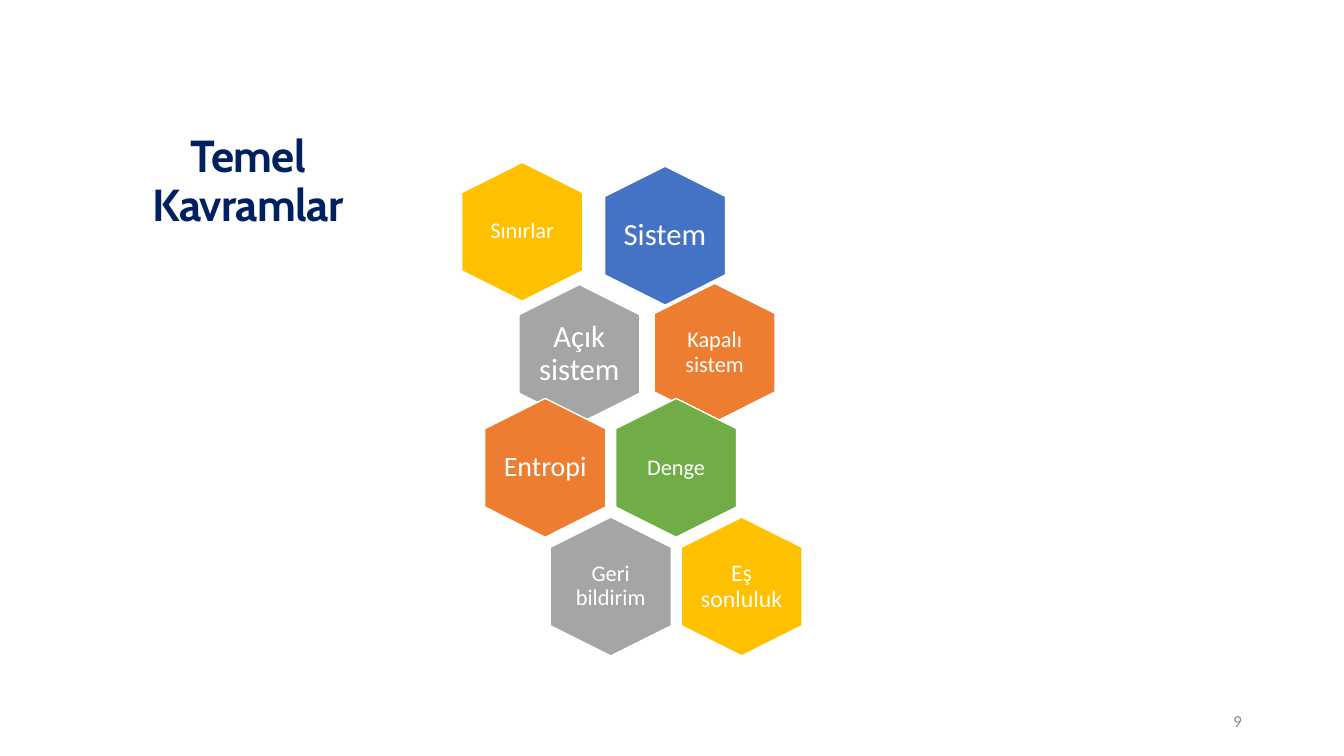
import dataclasses

import pptx
import pptx.dml.color
import pptx.enum.shapes
import pptx.enum.text
import pptx.util

Cm = pptx.util.Cm
Pt = pptx.util.Pt
Align = pptx.enum.text.PP_ALIGN


@dataclasses.dataclass(frozen=True)
class Theme:
    white: str = "FFFFFF"
    navy: str = "002060"
    mute: str = "8C8C8C"
    blue: str = "4472C4"
    orange: str = "ED7D31"
    gray: str = "A5A5A5"
    gold: str = "FFC000"
    green: str = "70AD47"
    head: str = "Cabin"
    body: str = "Calibri"
    title: int = 32
    large: int = 22
    mid: int = 20
    plus: int = 17
    small: int = 16
    foot: int = 12


THEME = Theme()

TITLE = "Temel Kavramlar"
NUMBER = "9"

# Label, centre x and y in cm, fill, type size; back to front
CELLS = [
    ("Kapalı sistem", 18.01, 8.89, THEME.orange, THEME.small),
    ("Açık sistem", 14.6, 8.92, THEME.gray, THEME.large),
    ("Sınırlar", 13.16, 5.84, THEME.gold, THEME.small),
    ("Sistem", 16.76, 5.94, THEME.blue, THEME.large),
    ("Denge", 17.04, 11.79, THEME.green, THEME.small),
    ("Entropi", 13.74, 11.79, THEME.orange, THEME.mid),
    ("Geri bildirim", 15.39, 14.78, THEME.gray, THEME.small),
    ("Eş sonluluk", 18.69, 14.78, THEME.gold, THEME.plus),
]
HEX = (3.5, 3.05)
LABEL = (2.11, 2.41)


def rgb(code):
    return pptx.dml.color.RGBColor.from_string(code)


def center(x, y, size):
    """Return left, top, width and height of a box centred on x, y."""
    wide, high = size
    return Cm(x - wide / 2), Cm(y - high / 2), Cm(wide), Cm(high)


def write(shape, text, size, color, align, face=THEME.body, bold=False,
          inset=None, space=None):
    frame = shape.text_frame
    frame.word_wrap = True
    frame.auto_size = pptx.enum.text.MSO_AUTO_SIZE.NONE
    frame.vertical_anchor = pptx.enum.text.MSO_ANCHOR.MIDDLE
    if inset is not None:
        frame.margin_left = frame.margin_right = inset
        frame.margin_top = frame.margin_bottom = inset
    frame.text = text
    para = frame.paragraphs[0]
    para.alignment = align
    para.line_spacing = space
    font = para.font
    font.name, font.size, font.bold = face, Pt(size), bold
    font.color.rgb = rgb(color)
    return para


def add_cell(slide, text, x, y, fill, size):
    """Add an upright hexagon with its label on top."""
    cell = slide.shapes.add_shape(
        pptx.enum.shapes.MSO_SHAPE.HEXAGON, *center(x, y, HEX))
    cell.rotation = 90
    cell.shadow.inherit = False
    cell.fill.solid()
    cell.fill.fore_color.rgb = rgb(fill)
    cell.line.color.rgb = rgb(THEME.white)
    cell.line.width = Pt(1)
    label = slide.shapes.add_textbox(*center(x, y, LABEL))
    write(label, text, size, THEME.white, Align.CENTER, inset=0, space=0.9)


def add_title(slide):
    title = slide.shapes.title
    title.left, title.top = Cm(2.41), Cm(4.09)
    title.width, title.height = Cm(7.67), Cm(1.02)
    para = write(title, TITLE, THEME.title, THEME.navy, Align.CENTER,
                 face=THEME.head, bold=True, space=0.9)
    para.runs[0]._r.get_or_add_rPr().set("spc", "-50")


def main():
    deck = pptx.Presentation()
    deck.slide_width, deck.slide_height = Cm(33.87), Cm(19.05)
    slide = deck.slides.add_slide(deck.slide_layouts[5])
    for cell in CELLS:
        add_cell(slide, *cell)
    add_title(slide)
    foot = slide.shapes.add_textbox(Cm(23.93), Cm(17.65), Cm(7.62), Cm(1.02))
    write(foot, NUMBER, THEME.foot, THEME.mute, Align.RIGHT)
    deck.save("out.pptx")


if __name__ == "__main__":
    main()
